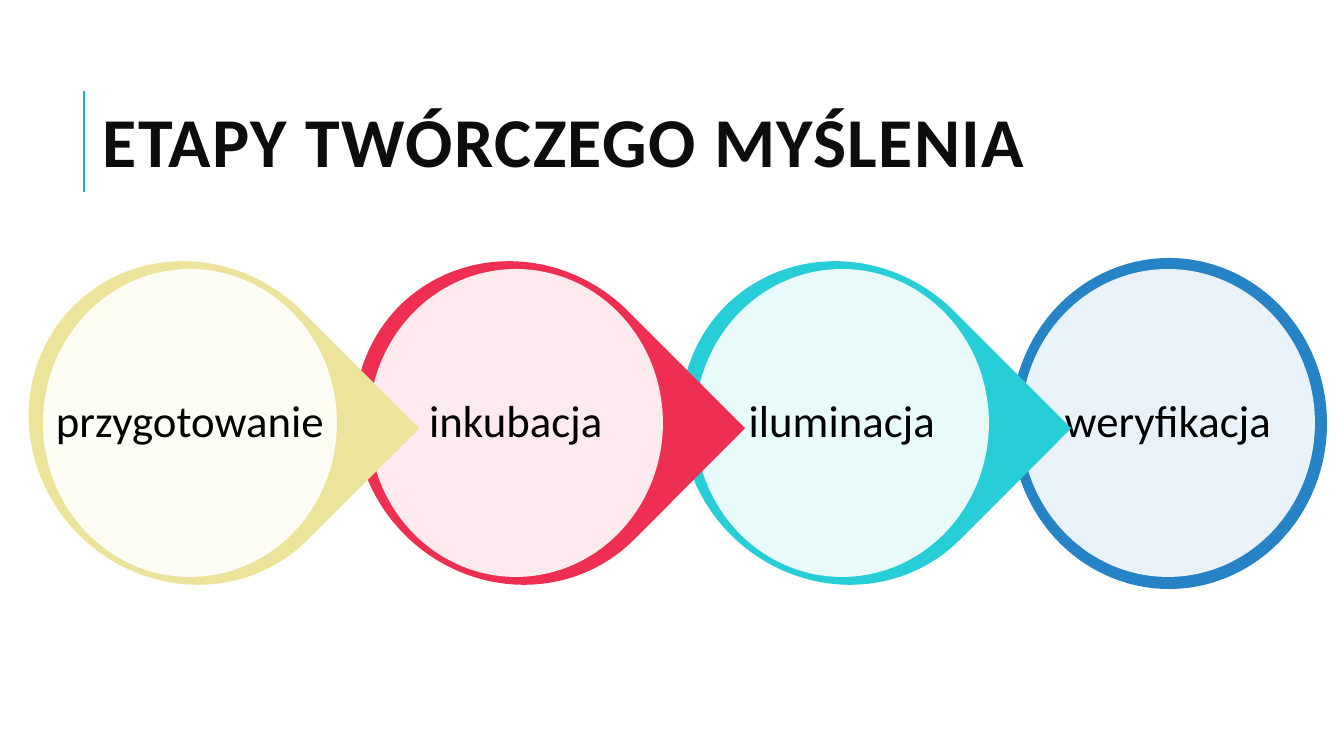
"""Builds a slide with the four stages of creative thinking."""
from lxml import etree
from pptx import Presentation
from pptx import util as u
from pptx.dml.color import RGBColor
from pptx.enum import shapes, text
from pptx.oxml.ns import qn

COLORS = {
    "accent": "1CADE4",
    "heading": "0D0D0D",
    "label": "000000",
    "disc": "FFFFFF",
    "sand": "EDE49B",
    "red": "EE2F52",
    "teal": "27CED7",
    "blue": "2683C6",
}
STAGES = [
    ("przygotowanie", "sand"),
    ("inkubacja", "red"),
    ("iluminacja", "teal"),
    ("weryfikacja", "blue"),
]
FONT = "Calibri"
EMU_PER_PX = 914400 / 100.8


def px(length):
    """Turn pixels into EMU."""
    return u.Emu(round(length * EMU_PER_PX))


def color(name):
    """Look up a colour by name."""
    return RGBColor.from_string(COLORS[name])


def write(frame, words, size, color_name, spacing):
    """Write one styled, vertically centred paragraph and return it."""
    frame.vertical_anchor = text.MSO_ANCHOR.MIDDLE
    paragraph = frame.paragraphs[0]
    paragraph.text = words
    paragraph.line_spacing = spacing
    font = paragraph.runs[0].font
    font.name, font.size = FONT, u.Pt(size)
    font.color.rgb = color(color_name)
    return paragraph


def add_solid(slide, preset, box, color_name):
    """Add a preset shape with a plain fill, no outline and no shadow."""
    solid = slide.shapes.add_shape(preset, *map(px, box))
    solid.shadow.inherit = False
    solid.fill.solid()
    solid.fill.fore_color.rgb = color(color_name)
    solid.line.fill.background()
    return solid


def add_heading(slide, left, top, width, height):
    """Add the slide title with the thin rule on its left."""
    rule_x = left - 9
    rule = slide.shapes.add_connector(
        shapes.MSO_CONNECTOR.STRAIGHT,
        px(rule_x), px(top + 127), px(rule_x), px(top + 26))
    rule.line.color.rgb = color("accent")
    rule.line.width = u.Pt(1.5)
    etree.SubElement(rule.element.spPr, qn("a:effectLst"))

    title = slide.shapes.add_textbox(*map(px, (left, top, width, height)))
    title.text_frame.word_wrap = True
    heading = write(title.text_frame, "ETAPY TWÓRCZEGO MYŚLENIA", 50, "heading", 0.8)
    heading.runs[0].font.bold = True
    heading.runs[0].font._element.set("spc", "100")


def add_stage(slide, left, top, width, height, label, color_name, is_last):
    """Add one stage: a coloured ring or drop with a labelled disc on it."""
    if is_last:
        ring = (left - 10, top - 11, width + 22, height + 23)
        add_solid(slide, shapes.MSO_SHAPE.OVAL, ring, color_name)
    else:
        ring = (left - 18, top - 4, width + 37, height + 8)
        drop = add_solid(slide, shapes.MSO_SHAPE.TEAR, ring, color_name)
        drop.rotation = 45

    disc = add_solid(slide, shapes.MSO_SHAPE.OVAL, (left, top, width, height), "disc")
    disc_color = disc.fill._xPr.find(qn("a:solidFill"))[0]
    etree.SubElement(disc_color, qn("a:alpha"), val="90000")
    frame = disc.text_frame
    frame.word_wrap = False
    frame.margin_left = frame.margin_right = px(4)
    write(frame, label, 32, "label", 0.9).alignment = text.PP_ALIGN.CENTER


def add_process(slide, left, top, width, height, pitch):
    """Add the stages from last to first, so each drop points over the next."""
    last = len(STAGES) - 1
    for index in range(last, -1, -1):
        label, color_name = STAGES[index]
        add_stage(slide, left + index * pitch, top, width, height,
                  label, color_name, index == last)


def main():
    """Build and save the slide."""
    deck = Presentation()
    deck.slide_width, deck.slide_height = px(1344), px(756)
    slide = deck.slides.add_slide(deck.slide_layouts[6])
    add_heading(slide, 93, 65, 1072, 165)
    add_process(slide, 43, 269, 294, 308, pitch=326)
    deck.save("out.pptx")


if __name__ == "__main__":
    main()
